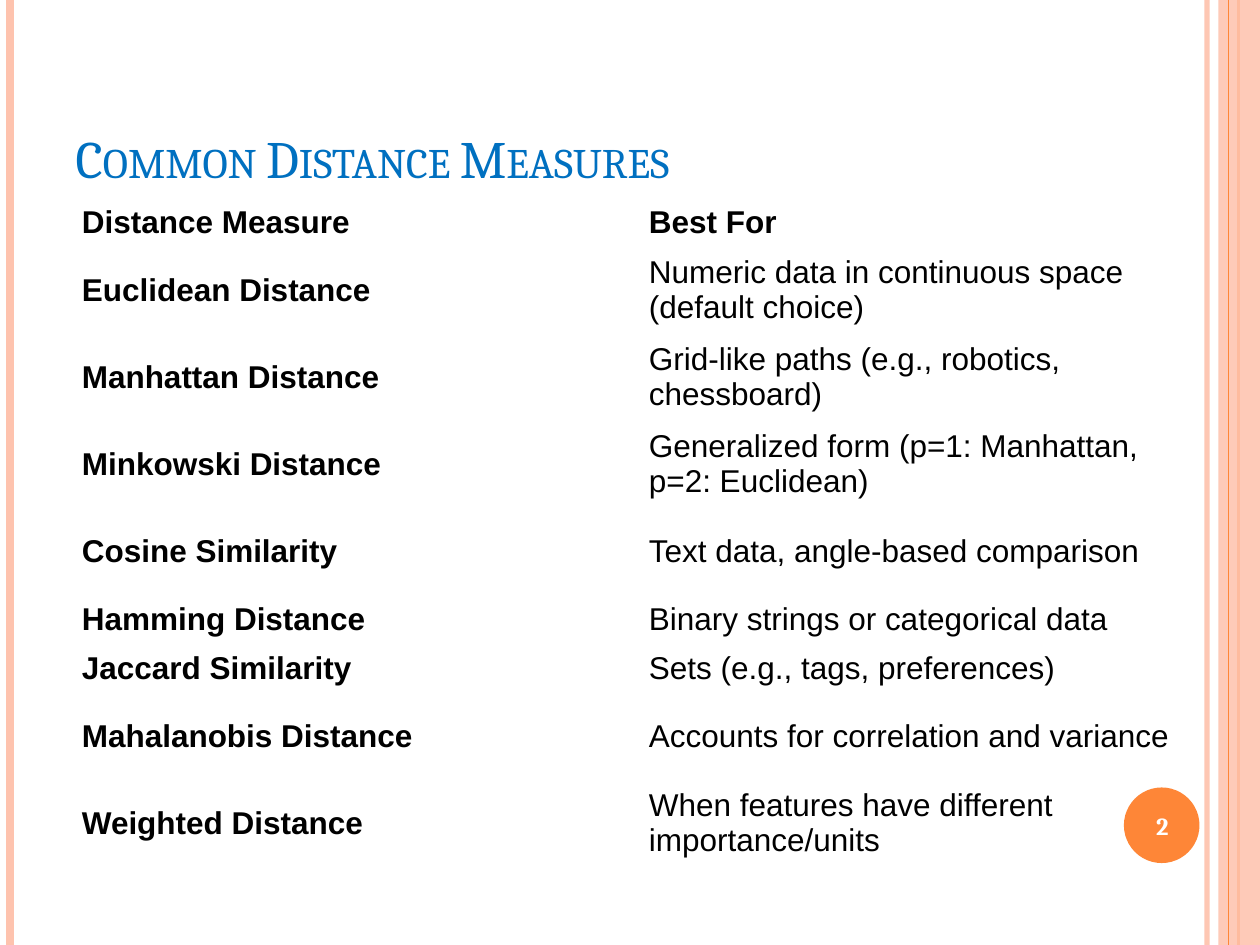
from lxml import etree
from pptx import Presentation
from pptx.dml.color import RGBColor
from pptx.enum.shapes import MSO_CONNECTOR, MSO_SHAPE
from pptx.enum.text import MSO_ANCHOR, MSO_AUTO_SIZE, PP_ALIGN
from pptx.oxml.ns import qn
from pptx.util import Inches, Pt

LINE = MSO_CONNECTOR.STRAIGHT
RECT, OVAL = MSO_SHAPE.RECTANGLE, MSO_SHAPE.OVAL
MIDDLE, BOTTOM = MSO_ANCHOR.MIDDLE, MSO_ANCHOR.BOTTOM
LEFT, CENTER = PP_ALIGN.LEFT, PP_ALIGN.CENTER
NO_FIT = MSO_AUTO_SIZE.NONE

WIDE, HIGH = 10, 7.5
COLORS = {"peach": "FEC3AE", "orange": "FE8637", "blue": "0070C0",
          "black": "000000", "white": "FFFFFF"}
PLAIN_STYLE = "{2D5ABB26-0587-4C30-8999-92F81FD0307C}"
SHORT, TALL = 0.39, 0.69
RULES = [(9.58, "peach", 3, 93), (0.08, "peach", 4.5, 100),
         (9.83, "orange", 1.5, 100)]
ROWS = [
    ("Distance Measure", "Best For", SHORT),
    ("Euclidean Distance", "Numeric data in continuous space (default choice)", TALL),
    ("Manhattan Distance", "Grid-like paths (e.g., robotics, chessboard)", TALL),
    ("Minkowski Distance", "Generalized form (p=1: Manhattan, p=2: Euclidean)", TALL),
    ("Cosine Similarity", "Text data, angle-based comparison", TALL),
    ("Hamming Distance", "Binary strings or categorical data", SHORT),
    ("Jaccard Similarity", "Sets (e.g., tags, preferences)", SHORT),
    ("Mahalanobis Distance", "Accounts for correlation and variance", TALL),
    ("Weighted Distance", "When features have different importance/units", TALL),
]


def paint(fill, color, alpha=100):
    """Set a solid fill with an opacity in percent."""
    fill.solid()
    fill.fore_color.rgb = RGBColor.from_string(COLORS[color])
    if alpha < 100:
        tone = fill._xPr.find(qn("a:solidFill"))[0]
        etree.SubElement(tone, qn("a:alpha")).set("val", str(alpha * 1000))


def write(frame, text, size=18, font="Arial", color="black", bold=False,
          align=LEFT, caps=False):
    """Write one formatted paragraph into a text frame."""
    para = frame.paragraphs[0]
    para.alignment = align
    run = para.add_run()
    run.text = text
    run.font.size, run.font.name, run.font.bold = Pt(size), font, bold
    run.font.color.rgb = RGBColor.from_string(COLORS[color])
    if caps:
        run.font._element.set("cap", "small")


def add_rule(slide, x, color, width, alpha=100):
    """Draw a vertical line over the full height."""
    rule = slide.shapes.add_connector(LINE, Inches(x), 0, Inches(x), Inches(HIGH))
    rule.line.width = Pt(width)
    paint(rule.line.fill, color, alpha)
    etree.SubElement(rule._element.spPr, qn("a:effectLst"))


def add_block(slide, kind, box, color, alpha=100):
    """Add a filled shape without an outline."""
    block = slide.shapes.add_shape(kind, *map(Inches, box))
    block.shadow.inherit = False
    block.line.fill.background()
    paint(block.fill, color, alpha)


def set_title(slide, text):
    """Place and format the title placeholder."""
    title = slide.shapes.title
    title.left, title.top, title.width, title.height = map(
        Inches, (0.5, 0.3, 8.17, 1.25))
    frame = title.text_frame
    frame.auto_size, frame.vertical_anchor = NO_FIT, BOTTOM
    write(frame, text, size=30, font="Cambria", color="blue", caps=True)


def add_grid(slide, rows):
    """Add the unbordered table of measures and their uses."""
    total = sum(row[-1] for row in rows)
    frame = slide.shapes.add_table(
        len(rows), 2, *map(Inches, (0.55, 1.57, 9, total)))
    table = frame.table
    table.first_row = table.horz_banding = False
    table._tbl.tblPr.find(qn("a:tableStyleId")).text = PLAIN_STYLE
    for r, (*texts, height) in enumerate(rows):
        table.rows[r].height = Inches(height)
        for c, text in enumerate(texts):
            cell = table.cell(r, c)
            cell.fill.background()
            cell.vertical_anchor = MIDDLE
            write(cell.text_frame, text, bold=r == 0 or c == 0)


def add_number(slide, text):
    """Add the page number over its disc."""
    box = slide.shapes.add_textbox(*map(Inches, (8.89, 6.27, 0.67, 0.57)))
    frame = box.text_frame
    frame.word_wrap, frame.vertical_anchor = True, MIDDLE
    write(frame, text, size=14, font="Cambria", color="white", bold=True,
          align=CENTER)


def main():
    """Build and save the slide."""
    deck = Presentation()
    deck.slide_width, deck.slide_height = Inches(WIDE), Inches(HIGH)
    slide = deck.slides.add_slide(deck.slide_layouts[5])
    for rule in RULES:
        add_rule(slide, *rule)
    add_block(slide, RECT, (9.67, 0, 0.33, HIGH), "peach", 87)
    add_rule(slide, 9.75, "orange", 0.75)
    add_block(slide, OVAL, (8.92, 6.25, 0.6, 0.6), "orange")
    set_title(slide, "Common Distance Measures")
    add_grid(slide, ROWS)
    add_number(slide, "2")
    deck.save("out.pptx")


if __name__ == "__main__":
    main()
